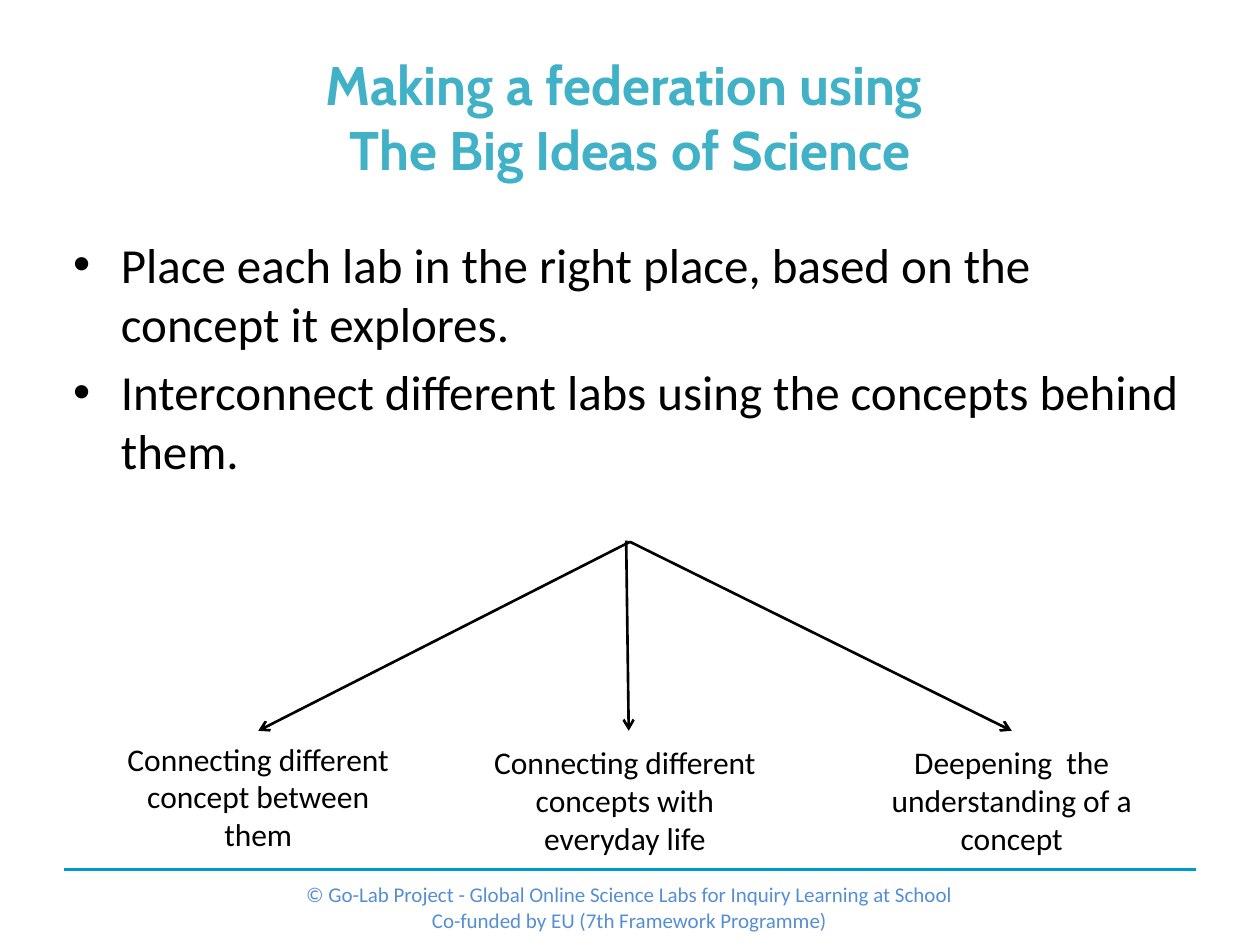
import pptx
import pptx.dml.color
import pptx.enum.shapes
import pptx.enum.text
import pptx.oxml
import pptx.oxml.ns
import pptx.util

Inches = pptx.util.Inches
CENTER = pptx.enum.text.PP_ALIGN.CENTER
MIDDLE = pptx.enum.text.MSO_ANCHOR.MIDDLE
TOP = pptx.enum.text.MSO_ANCHOR.TOP
BLACK = "000000"


def color(hex_value):
    return pptx.dml.color.RGBColor.from_string(hex_value)


def add_element(parent, tag, **attributes):
    element = pptx.oxml.parse_xml(f"<{tag} {pptx.oxml.ns.nsdecls('a')}/>")
    for name, value in attributes.items():
        element.set(name, value)
    parent.append(element)


def place(shape, left, top, width, height):
    shape.left, shape.top = Inches(left), Inches(top)
    shape.width, shape.height = Inches(width), Inches(height)


def prepare_frame(shape, anchor):
    frame = shape.text_frame
    frame.word_wrap = True
    frame.auto_size = pptx.enum.text.MSO_AUTO_SIZE.NONE
    frame.vertical_anchor = anchor
    return frame


def add_run(para, text, size, hex_value, font="Calibri", bold=False):
    span = para.add_run()
    span.text = text
    span.font.name = font
    span.font.size = pptx.util.Pt(size)
    span.font.bold = bold
    span.font.color.rgb = color(hex_value)


def next_paragraph(frame, index):
    return frame.add_paragraph() if index else frame.paragraphs[0]


def fill_title(title, lines):
    place(title, 0.5, 0.3, 9, 1.25)
    para = prepare_frame(title, MIDDLE).paragraphs[0]
    para.alignment = CENTER
    for index, line in enumerate(lines):
        if index:
            para.add_line_break()
        add_run(para, line, 31, "40B1C7", "Cabin", True)


def fill_bullets(body, items):
    place(body, 0.48, 1.81, 9, 4.95)
    frame = prepare_frame(body, TOP)
    for index, item in enumerate(items):
        para = next_paragraph(frame, index)
        properties = para._p.get_or_add_pPr()
        properties.set("marL", str(Inches(0.38)))
        properties.set("indent", str(Inches(-0.38)))
        add_element(properties, "a:buFont", typeface="Arial")
        add_element(properties, "a:buChar", char="•")
        para.space_before = pptx.util.Pt(5.6 if index else 0)
        add_run(para, item, 28, BLACK)


def add_text(page, bounds, lines, size, hex_value):
    box = page.shapes.add_textbox(*map(Inches, bounds))
    frame = prepare_frame(box, MIDDLE)
    for index, line in enumerate(lines):
        para = next_paragraph(frame, index)
        para.alignment = CENTER
        add_run(para, line, size, hex_value)


def add_line(page, start, end, hex_value, arrow=False):
    line = page.shapes.add_connector(
        pptx.enum.shapes.MSO_CONNECTOR.STRAIGHT, *map(Inches, start + end))
    line.line.color.rgb = color(hex_value)
    line.line.width = pptx.util.Pt(1.5)
    if arrow:
        add_element(line.line._get_or_add_ln(), "a:tailEnd", type="arrow")
    add_element(line._element.spPr, "a:effectLst")


def main():
    deck = pptx.Presentation()
    deck.slide_width, deck.slide_height = Inches(10), Inches(7.5)
    page = deck.slides.add_slide(deck.slide_layouts[1])

    # Title and list
    fill_title(page.shapes.title,
               ["Making a federation using ", "The Big Ideas of Science"])
    fill_bullets(page.placeholders[1], [
        "Place each lab in the right place, based on the concept it explores.",
        "Interconnect different labs using the concepts behind them.",
    ])

    # Three arrows fanning out to their captions
    branches = [
        ((5, 4.3), (2.05, 5.8), (0.83, 5.77),
         "Connecting different concept between them"),
        ((4.97, 4.29), (4.99, 5.8), (3.74, 5.8),
         "Connecting different concepts with everyday life"),
        ((5, 4.3), (8.03, 5.8), (6.81, 5.8),
         "Deepening  the understanding of a concept"),
    ]
    for start, end, corner, caption in branches:
        add_line(page, start, end, BLACK, arrow=True)
        add_text(page, corner + (2.44, 1.1), [caption], 18, BLACK)

    # Footer
    add_line(page, (0.51, 6.9), (9.49, 6.9), "0099CC")
    add_text(page, (2.2, 6.9, 5.59, 0.6), [
        "© Go-Lab Project - Global Online Science Labs for Inquiry Learning at School",
        "Co-funded by EU (7th Framework Programme)",
    ], 12, "558ED5")

    deck.save("out.pptx")


if __name__ == "__main__":
    main()
